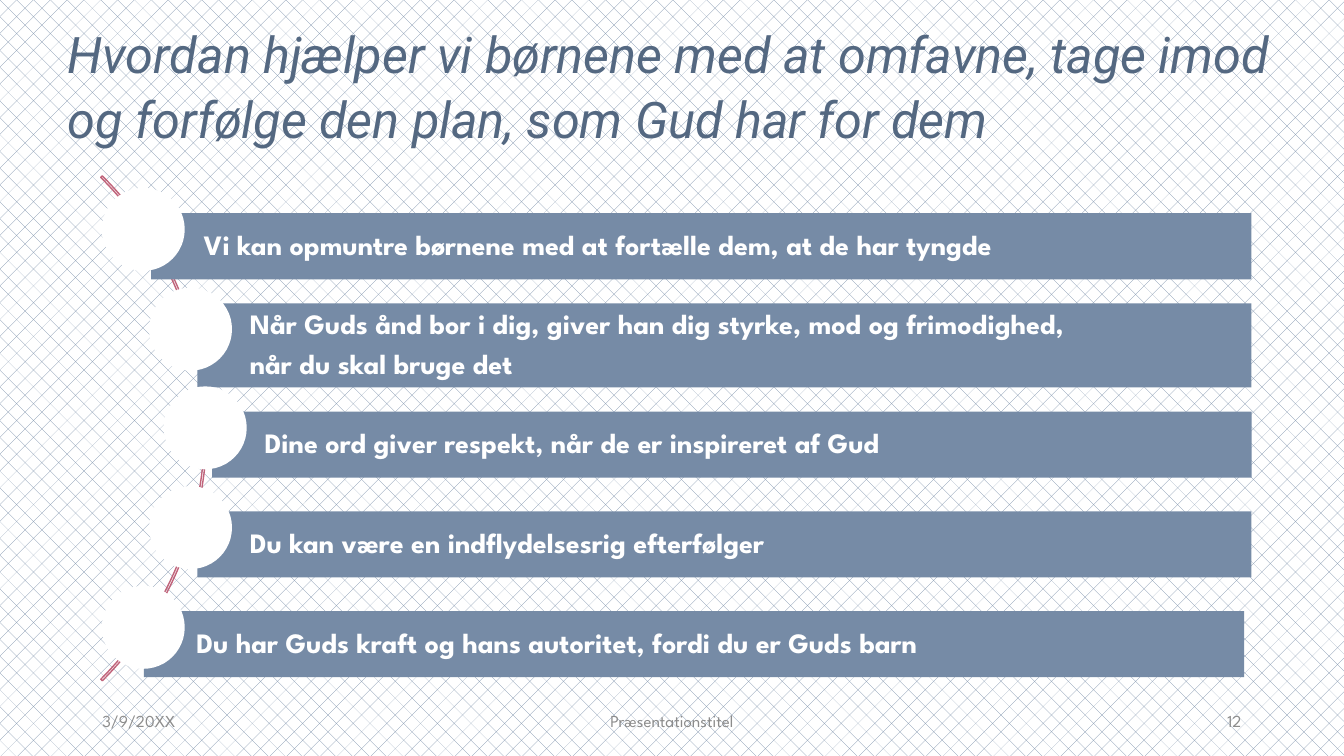
import math
from dataclasses import dataclass

from pptx import Presentation
from pptx import util as u
from pptx.dml.color import RGBColor
from pptx.enum import dml, shapes, text


@dataclass(frozen=True)
class Theme:
    title_font: str = "Roboto"
    body_font: str = "League Spartan"
    title_size: int = 36
    bar_size: int = 20
    footer_size: int = 12
    slate: RGBColor = RGBColor(0x76, 0x8B, 0xA6)
    title: RGBColor = RGBColor(0x54, 0x68, 0x81)
    rose: RGBColor = RGBColor(0xC0, 0x63, 0x7A)
    grey: RGBColor = RGBColor(0x8C, 0x8C, 0x8C)
    white: RGBColor = RGBColor(0xFF, 0xFF, 0xFF)


THEME = Theme()
EMU_PER_PX = 9525

TITLE = ("Hvordan hjælper vi børnene med at omfavne, tage imod "
         "og forfølge den plan, som Gud har for dem")
POINTS = [
    ["Vi kan opmuntre børnene med at fortælle dem, at de har tyngde"],
    ["Når Guds ånd bor i dig, giver han dig styrke, mod og frimodighed,",
     "når du skal bruge det"],
    ["Dine ord giver respekt, når de er inspireret af Gud"],
    ["Du kan være en indflydelsesrig efterfølger"],
    ["Du har Guds kraft og hans autoritet, fordi du er Guds barn"],
]


def px(length):
    return u.Emu(round(length) * EMU_PER_PX)


def place(shape, box):
    shape.left, shape.top, shape.width, shape.height = map(px, box)


def write(frame, lines, font, size, color, align=text.PP_ALIGN.LEFT,
          bold=False, italic=False, spacing=1.0, after=0):
    frame.word_wrap = True
    frame.auto_size = text.MSO_AUTO_SIZE.NONE
    frame.vertical_anchor = text.MSO_ANCHOR.MIDDLE
    for index, line in enumerate(lines):
        paragraph = frame.paragraphs[0] if index == 0 else frame.add_paragraph()
        paragraph.text = line
        paragraph.alignment = align
        paragraph.line_spacing = spacing
        paragraph.space_before = u.Pt(0)
        paragraph.space_after = u.Pt(after)
        paragraph.font.name = font
        paragraph.font.size = u.Pt(size)
        paragraph.font.bold = bold
        paragraph.font.italic = italic
        paragraph.font.color.rgb = color


def add_plain_shape(slide, kind, box, fill=None):
    shape = slide.shapes.add_shape(kind, *map(px, box))
    shape.shadow.inherit = False
    shape.line.fill.background()
    if fill is None:
        shape.fill.background()
    else:
        shape.fill.solid()
        shape.fill.fore_color.rgb = fill
    return shape


def set_background(slide):
    fill = slide.background.fill
    fill.patterned()
    fill.pattern = dml.MSO_PATTERN.DOTTED_DIAMOND
    fill.fore_color.rgb = THEME.slate
    fill.back_color.rgb = THEME.white


def set_title(slide, box):
    title = slide.shapes.title
    place(title, box)
    write(title.text_frame, [TITLE], THEME.title_font, THEME.title_size,
          THEME.title, italic=True, spacing=1.07, after=8)


def add_bar(slide, lines, box):
    bar = add_plain_shape(slide, shapes.MSO_SHAPE.RECTANGLE, box, THEME.slate)
    frame = bar.text_frame
    frame.margin_left = px(50)
    frame.margin_top = frame.margin_right = frame.margin_bottom = px(6)
    write(frame, lines, THEME.body_font, THEME.bar_size, THEME.white,
          bold=True, spacing=0.9, after=7)


def add_curved_list(slide, box):
    """Bars with discs whose centres follow an arc bulging to the right."""
    left, top, width, height = box
    diameter, arc_size, disc_radius = 79, 680, 338
    arc_x, arc_y = left - 239, top + height / 2
    pitch = (height - diameter) / (len(POINTS) - 1)

    # Thin arc behind the bars, from 315 to 45 degrees
    arc = add_plain_shape(slide, shapes.MSO_SHAPE.BLOCK_ARC,
                          (arc_x - arc_size / 2, arc_y - arc_size / 2,
                           arc_size, arc_size))
    for index, value in enumerate((189, 27, 0.003)):
        arc.adjustments[index] = value
    arc.line.color.rgb = THEME.rose
    arc.line.width = u.Pt(1)

    for index, lines in enumerate(POINTS):
        middle_y = top + diameter / 2 + index * pitch
        middle_x = arc_x + math.sqrt(disc_radius ** 2 - (middle_y - arc_y) ** 2)
        bar_height = 63 if len(lines) == 1 else 80
        bar_width = left + width - middle_x - 7
        bar_left = middle_x + (0 if index == len(POINTS) - 1 else 7)
        add_bar(slide, lines, (bar_left, middle_y + 16 - bar_height / 2,
                               bar_width, bar_height))
        add_plain_shape(slide, shapes.MSO_SHAPE.OVAL,
                        (middle_x - diameter / 2, middle_y - diameter / 2,
                         diameter, diameter), THEME.white)


def add_footer(slide, box):
    left, top, width, height = box
    side, centre = 288, 432
    parts = [
        ("3/9/20XX", left, side, text.PP_ALIGN.LEFT),
        ("Præsentationstitel", left + (width - centre) / 2, centre,
         text.PP_ALIGN.CENTER),
        ("12", left + width - side, side, text.PP_ALIGN.RIGHT),
    ]
    for words, part_left, part_width, align in parts:
        label = slide.shapes.add_textbox(
            *map(px, (part_left, top, part_width, height)))
        write(label.text_frame, [words], THEME.body_font, THEME.footer_size,
              THEME.grey, align=align, after=6)


def main():
    presentation = Presentation()
    presentation.slide_width, presentation.slide_height = px(1280), px(720)
    slide = presentation.slides.add_slide(presentation.slide_layouts[5])
    set_background(slide)
    set_title(slide, (55, 38, 1191, 83))
    add_curved_list(slide, (96, 179, 1096, 458))
    add_footer(slide, (88, 667, 1104, 38))
    presentation.save("out.pptx")


if __name__ == "__main__":
    main()
